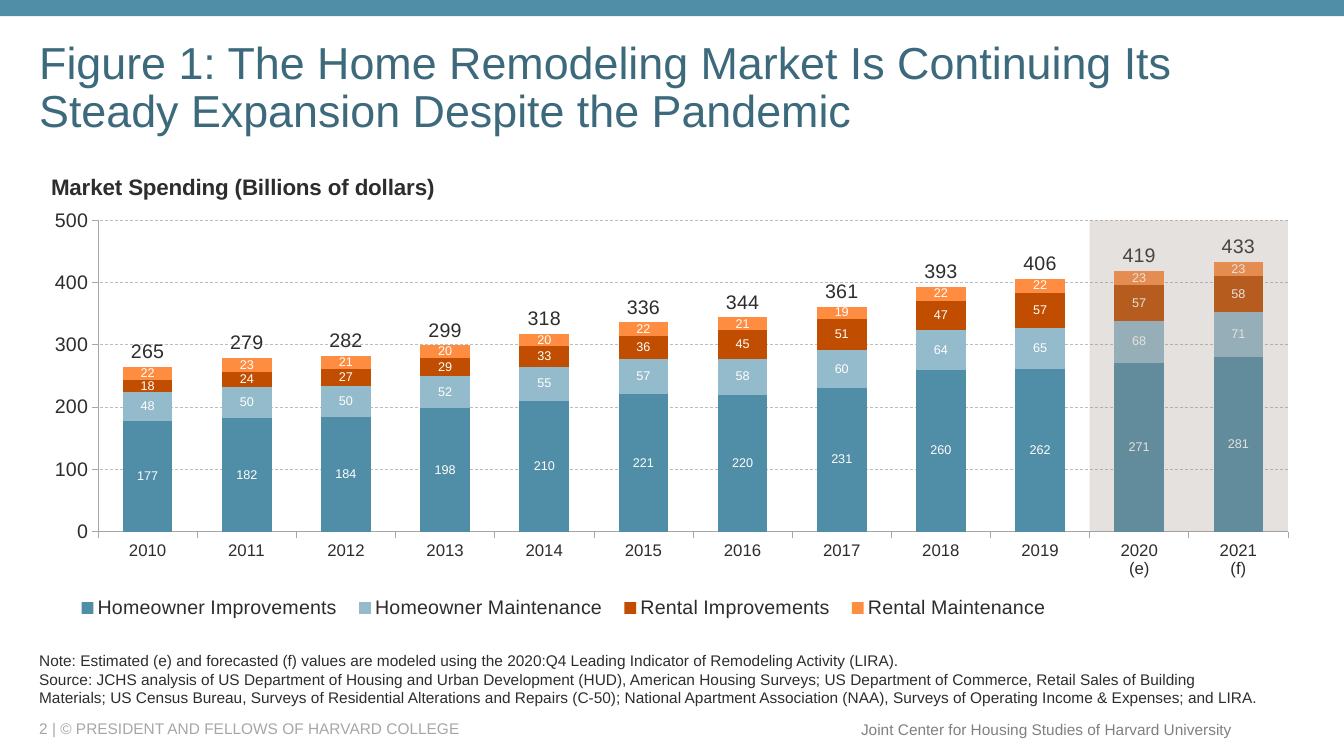
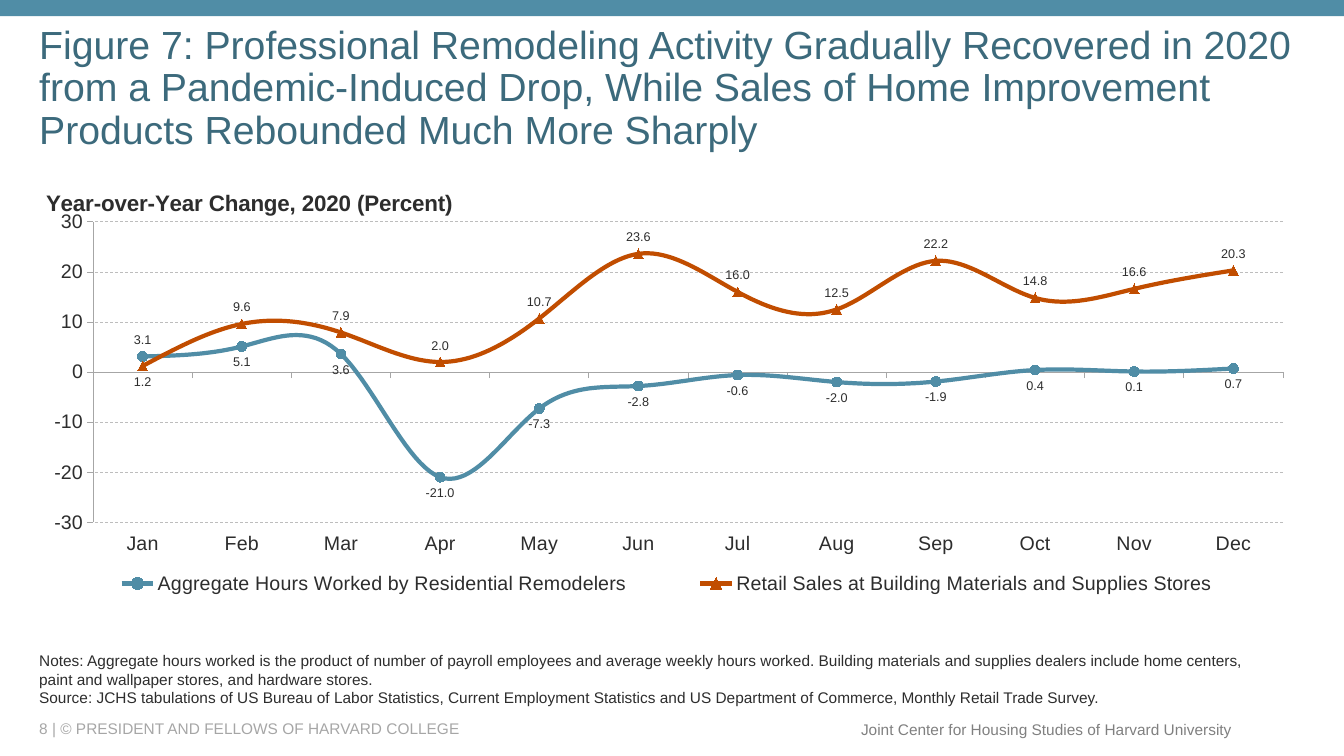
import copy

import pptx
import pptx.chart.data
import pptx.dml.color
import pptx.enum.chart
import pptx.enum.dml
import pptx.enum.shapes
import pptx.enum.text
import pptx.oxml
import pptx.oxml.ns
import pptx.util

Inches, Pt = pptx.util.Inches, pptx.util.Pt
qn = pptx.oxml.ns.qn
XL = pptx.enum.chart
ANCHOR = pptx.enum.text.MSO_ANCHOR
ALIGN = pptx.enum.text.PP_ALIGN
LABEL = XL.XL_LABEL_POSITION
MARKER = XL.XL_MARKER_STYLE
NS = 'xmlns:c="http://schemas.openxmlformats.org/drawingml/2006/chart"'

W, H = 13.33, 7.5
MARGIN = 0.29
FONT = "Arial"
COLORS = {
    "blue": "508DA6", "light_blue": "94BBCB", "rust": "C14D00", "orange": "FF8D41",
    "title": "3C6A7C", "text": "2D2D2D", "white": "FFFFFF", "shade": "998B7D",
    "axis": "A6A6A6", "grid": "BDBDBD", "page": "A6A6A6", "center": "808080",
}
COPYRIGHT = "© PRESIDENT AND FELLOWS OF HARVARD COLLEGE"
CENTER = "Joint Center for Housing Studies of Harvard University"

MARKET = {
    "page": 2,
    "title": "Figure 1: The Home Remodeling Market Is Continuing Its Steady Expansion "
             "Despite the Pandemic",
    "title_size": 32,
    "notes_box": (MARGIN, 6.48, 12.36, 0.58),
    "notes": [
        "Note: Estimated (e) and forecasted (f) values are modeled using the 2020:Q4 Leading "
        "Indicator of Remodeling Activity (LIRA).",
        "Source: JCHS analysis of US Department of Housing and Urban Development (HUD), American "
        "Housing Surveys; US Department of Commerce, Retail Sales of Building Materials; US Census "
        "Bureau, Surveys of Residential Alterations and Repairs (C-50); National Apartment "
        "Association (NAA), Surveys of Operating Income & Expenses; and LIRA.",
    ],
    "chart": {
        "type": XL.XL_CHART_TYPE.COLUMN_STACKED,
        "box": (0.34, 1.53, 12.65, 4.79),
        "plot": (0.05, 0.137, 0.933, 0.645),
        "legend": (0.025, 0.9, 0.78, 0.08),
        "title": "Market Spending (Billions of dollars)",
        "scale": (0, 500, 100), "axis_format": "#,##0", "label_format": "0", "cat_size": 12,
        "cats": [str(year) for year in range(2010, 2020)] + ["2020\n(e)", "2021\n(f)"],
        # name, colour, label position, label size, label colour, values
        "series": [
            ("Homeowner Improvements", "blue", LABEL.CENTER, 9, "white",
             [177, 182, 184, 198, 210, 221, 220, 231, 260, 262, 271, 281]),
            ("Homeowner Maintenance", "light_blue", LABEL.CENTER, 9, "white",
             [48, 50, 50, 52, 55, 57, 58, 60, 64, 65, 68, 71]),
            ("Rental Improvements", "rust", LABEL.CENTER, 9, "white",
             [18, 24, 27, 29, 33, 36, 45, 51, 47, 57, 57, 58]),
            ("Rental Maintenance", "orange", LABEL.CENTER, 9, "white",
             [22, 23, 21, 20, 20, 22, 21, 19, 22, 22, 23, 23]),
            ("Total", None, LABEL.OUTSIDE_END, 14, "text",
             [265, 279, 282, 299, 318, 336, 344, 361, 393, 406, 419, 433]),
        ],
    },
}
ACTIVITY = {
    "page": 8,
    "title": "Figure 7: Professional Remodeling Activity Gradually Recovered in 2020 from a "
             "Pandemic-Induced Drop, While Sales of Home Improvement Products Rebounded Much "
             "More Sharply",
    "title_size": 28,
    "notes_box": (MARGIN, 6.26, 12.5, 0.8),
    "notes": [
        "Notes: Aggregate hours worked is the product of number of payroll employees and average "
        "weekly hours worked. Building materials and supplies dealers include home centers, paint "
        "and wallpaper stores, and hardware stores.",
        "Source: JCHS tabulations of US Bureau of Labor Statistics, Current Employment Statistics "
        "and US Department of Commerce, Monthly Retail Trade Survey.",
    ],
    "chart": {
        "type": XL.XL_CHART_TYPE.LINE_MARKERS,
        "box": (MARGIN, 1.7, 12.65, 4.47),
        "plot": (0.05, 0.112, 0.933, 0.667),
        "legend": (0.02, 0.87, 0.96, 0.09),
        "title": "Year-over-Year Change, 2020 (Percent)",
        "scale": (-30, 30, 10), "axis_format": "General", "label_format": "0.0", "cat_size": 14,
        "cats": "Jan Feb Mar Apr May Jun Jul Aug Sep Oct Nov Dec".split(),
        "series": [
            ("Aggregate Hours Worked by Residential Remodelers", "blue", LABEL.BELOW, 9, "text",
             [3.1, 5.1, 3.6, -21, -7.3, -2.8, -0.6, -2, -1.9, 0.4, 0.1, 0.7]),
            ("Retail Sales at Building Materials and Supplies Stores", "rust", LABEL.ABOVE, 9,
             "text", [1.2, 9.6, 7.9, 2, 10.7, 23.6, 16, 12.5, 22.2, 14.8, 16.6, 20.3]),
        ],
    },
}
# marker and position of the first label, for each line
LINE_STYLES = [(MARKER.CIRCLE, LABEL.ABOVE), (MARKER.TRIANGLE, LABEL.BELOW)]


def rgb(name):
    return pptx.dml.color.RGBColor.from_string(COLORS[name])


def set_font(font, size, color, bold=False):
    for key, value in {"name": FONT, "size": Pt(size), "bold": bold}.items():
        setattr(font, key, value)
    font.color.rgb = rgb(color)


def add_text(s, box, paragraphs, size, color, anchor=ANCHOR.MIDDLE, **paragraph_format):
    tf = s.shapes.add_textbox(*map(Inches, box)).text_frame
    tf.word_wrap, tf.vertical_anchor = True, anchor
    for i, text in enumerate(paragraphs):
        p = tf.add_paragraph() if i else tf.paragraphs[0]
        for key, value in paragraph_format.items():
            setattr(p, key, value)
        r = p.add_run()
        r.text = text
        set_font(r.font, size, color)
    return tf


def add_rect(s, box, color):
    sp = s.shapes.add_shape(pptx.enum.shapes.MSO_SHAPE.RECTANGLE, *map(Inches, box))
    sp.shadow.inherit = False
    sp.fill.solid()
    sp.fill.fore_color.rgb = rgb(color)
    sp.line.fill.background()
    return sp


def set_layout(parent, after, box, inner=False):
    """Place a chart part by shares of the chart; after is the tag it follows, if any."""
    for old in parent.findall(qn("c:layout")):
        parent.remove(old)
    target = '<c:layoutTarget val="inner"/>' if inner else ""
    modes = "".join(f'<c:{k}Mode val="edge"/>' for k in "xy")
    sizes = "".join(f'<c:{k} val="{v}"/>' for k, v in zip("xywh", box))
    layout = pptx.oxml.parse_xml(
        f"<c:layout {NS}><c:manualLayout>{target}{modes}{sizes}</c:manualLayout></c:layout>")
    if after:
        parent.find(qn(after)).addnext(layout)
    else:
        parent.insert(0, layout)


def style_axis(axis, size):
    axis.major_tick_mark = XL.XL_TICK_MARK.OUTSIDE
    axis.minor_tick_mark = XL.XL_TICK_MARK.NONE
    axis.tick_label_position = XL.XL_TICK_LABEL_POSITION.LOW
    axis.format.line.color.rgb = rgb("axis")
    axis.format.line.width = Pt(0.5)
    set_font(axis.tick_labels.font, size, "text")


def style_series(ser, row, number_format):
    _, color, position, size, label_color, _ = row
    if color:
        ser.format.fill.solid()
        ser.format.fill.fore_color.rgb = rgb(color)
    else:
        ser.format.fill.background()
    labels = ser.data_labels
    for key, value in {"show_value": True, "position": position, "number_format": number_format,
                       "number_format_is_linked": False}.items():
        setattr(labels, key, value)
    set_font(labels.font, size, label_color)


def style_line(ser, color, marker, first_label):
    ser.smooth = True
    ser.format.line.color.rgb = rgb(color)
    ser.format.line.width = Pt(3)
    ser.marker.style, ser.marker.size = marker, 7
    ser.marker.format.fill.solid()
    for part in (ser.marker.format.fill.fore_color, ser.marker.format.line.color):
        part.rgb = rgb(color)
    label = ser.points[0].data_label
    set_font(label.font, 9, "text")
    label.position = first_label


def move_totals_to_second_axis(chart, scale):
    """Put the last series in an unstacked plot of its own and hide its legend entry."""
    plot_area = chart.element.find(".//" + qn("c:plotArea"))
    stacked = plot_area.find(qn("c:barChart"))
    clustered = copy.deepcopy(stacked)
    stacked.remove(stacked.findall(qn("c:ser"))[-1])
    for ser in clustered.findall(qn("c:ser"))[:-1]:
        clustered.remove(ser)
    clustered.find(qn("c:grouping")).set("val", "clustered")
    clustered.find(qn("c:overlap")).set("val", "0")
    ids = ("50010", "50020")
    for ax, ax_id in zip(clustered.findall(qn("c:axId")), ids):
        ax.set("val", ax_id)
    stacked.addnext(clustered)
    low, high, step = scale
    axes = [
        ("catAx", ids, "", 1, "b", "", "autoZero", ""),
        ("valAx", ids[::-1], f'<c:max val="{high}"/><c:min val="{low}"/>', 0, "r",
         '<c:spPr><a:ln xmlns:a="http://schemas.openxmlformats.org/drawingml/2006/main">'
         "<a:noFill/></a:ln></c:spPr>", "max", f'<c:majorUnit val="{step}"/>'),
    ]
    last = plot_area.findall(qn("c:valAx"))[-1]
    for tag, (own, cross), limits, hidden, side, line, crosses, unit in axes:
        axis = pptx.oxml.parse_xml(
            f'<c:{tag} {NS}><c:axId val="{own}"/>'
            f'<c:scaling><c:orientation val="minMax"/>{limits}</c:scaling>'
            f'<c:delete val="{hidden}"/><c:axPos val="{side}"/>'
            '<c:majorTickMark val="none"/><c:minorTickMark val="none"/>'
            f'<c:tickLblPos val="none"/>{line}<c:crossAx val="{cross}"/>'
            f'<c:crosses val="{crosses}"/>{unit}</c:{tag}>')
        last.addnext(axis)
        last = axis
    entry = f'<c:legendEntry {NS}><c:idx val="4"/><c:delete val="1"/></c:legendEntry>'
    chart.element.find(".//" + qn("c:legendPos")).addnext(pptx.oxml.parse_xml(entry))


def add_chart(s, spec):
    data = pptx.chart.data.CategoryChartData(number_format=spec["label_format"])
    data.categories = spec["cats"]
    for row in spec["series"]:
        data.add_series(row[0], row[-1])
    chart = s.shapes.add_chart(spec["type"], *map(Inches, spec["box"]), data).chart
    set_font(chart.font, 10, "text")

    chart.has_title = True
    p = chart.chart_title.text_frame.paragraphs[0]
    r = p.add_run()
    r.text = spec["title"]
    set_font(r.font, 16, "text", bold=True)
    chart.chart_title.include_in_layout = False
    chart.has_legend = True
    chart.legend.position = XL.XL_LEGEND_POSITION.BOTTOM
    chart.legend.include_in_layout = False
    set_font(chart.legend.font, 14, "text")

    style_axis(chart.category_axis, spec["cat_size"])
    axis = chart.value_axis
    style_axis(axis, 14)
    axis.minimum_scale, axis.maximum_scale, axis.major_unit = spec["scale"]
    axis.tick_labels.number_format = spec["axis_format"]
    axis.tick_labels.number_format_is_linked = False
    grid = axis.major_gridlines.format.line
    grid.color.rgb = rgb("grid")
    grid.width = Pt(0.5)
    grid.dash_style = pptx.enum.dml.MSO_LINE.DASH

    plot = chart.plots[0]
    plot.vary_by_categories = False
    is_line = spec["type"] == XL.XL_CHART_TYPE.LINE_MARKERS
    for i, (ser, row) in enumerate(zip(plot.series, spec["series"])):
        if is_line:
            style_line(ser, row[1], *LINE_STYLES[i])
        style_series(ser, row, spec["label_format"])

    root = chart.element
    set_layout(root.find(".//" + qn("c:plotArea")), None, spec["plot"], inner=True)
    set_layout(root.find(".//" + qn("c:title")), "c:tx", (0.01, 0.03))
    set_layout(root.find(".//" + qn("c:legend")), "c:legendPos", spec["legend"])
    if not is_line:
        plot.gap_width, plot.overlap = 100, 100
        move_totals_to_second_axis(chart, spec["scale"])


def shade_last_categories(s, spec, count):
    left, top, width, height = spec["box"]
    x, y, w, h = spec["plot"]
    share = count / len(spec["cats"])
    box = (left + width * (x + w * (1 - share)), top + height * y, width * w * share, height * h)
    sp = add_rect(s, box, "shade")
    color = sp.fill._xPr.find(".//" + qn("a:srgbClr"))
    color.append(pptx.oxml.parse_xml(
        '<a:alpha xmlns:a="http://schemas.openxmlformats.org/drawingml/2006/main" val="25000"/>'))


def add_figure_slide(prs, figure):
    s = prs.slides.add_slide(prs.slide_layouts[6])
    add_text(s, (MARGIN, 7.13, 7.92, 0.2), [f"{figure['page']} | {COPYRIGHT}"], 11, "page")
    center = add_text(s, (8.42, 7.09, 3.9, 0.29), [CENTER], 11, "center", alignment=ALIGN.RIGHT)
    center.word_wrap = False
    add_rect(s, (0, 0, W, 0.16), "blue")
    add_text(s, (MARGIN, 0.4, 12.65, 0.97), [figure["title"]], figure["title_size"], "title",
             line_spacing=0.9)
    add_chart(s, figure["chart"])
    add_text(s, figure["notes_box"], figure["notes"], 11, "text", ANCHOR.BOTTOM)
    return s


def main():
    prs = pptx.Presentation()
    prs.slide_width, prs.slide_height = Inches(W), Inches(H)
    market = add_figure_slide(prs, MARKET)
    shade_last_categories(market, MARKET["chart"], 2)
    add_figure_slide(prs, ACTIVITY)
    prs.save("out.pptx")


if __name__ == "__main__":
    main()
